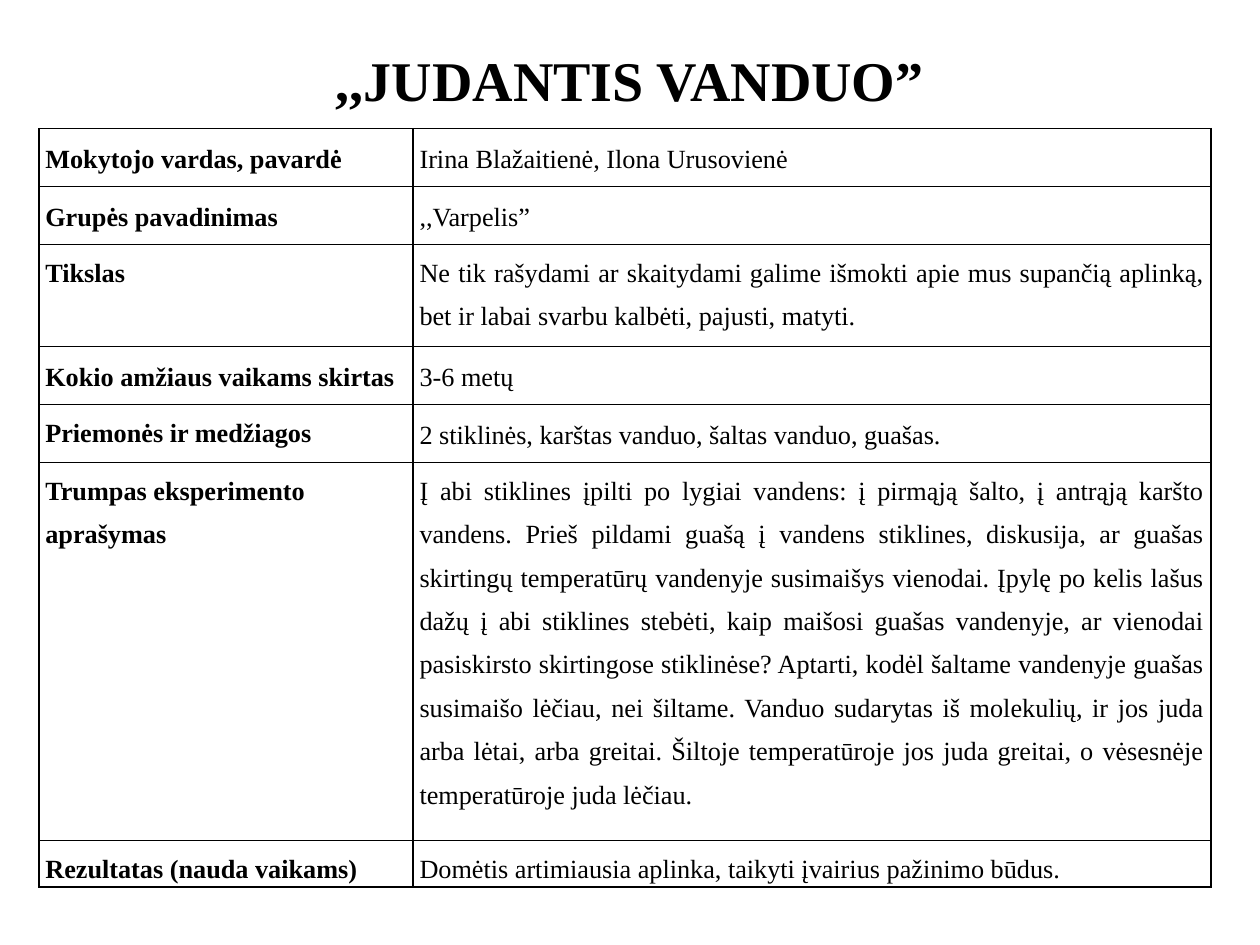
from dataclasses import dataclass

from lxml import etree
from pptx import Presentation
from pptx.dml.color import RGBColor
from pptx.enum.text import MSO_ANCHOR, PP_ALIGN
from pptx.oxml.ns import qn
from pptx.util import Inches, Pt

TOP, MIDDLE = MSO_ANCHOR.TOP, MSO_ANCHOR.MIDDLE
LEFT, CENTER, JUSTIFY = PP_ALIGN.LEFT, PP_ALIGN.CENTER, PP_ALIGN.JUSTIFY
COLORS = {"ink": "000000"}
FONT = "Times New Roman"
WIDTH, HEIGHT = 10, 7.5
COLUMNS = (2.97, 6.33)
BORDER = Pt(1)


@dataclass
class Row:
    label: str
    text: str
    height: float = 0.46
    anchor: MSO_ANCHOR = MIDDLE
    align: PP_ALIGN = LEFT
    spacing: float = 1.15
    label_spacing: float = 1.15


ROWS = [
    Row("Mokytojo vardas, pavardė", "Irina Blažaitienė, Ilona Urusovienė"),
    Row("Grupės pavadinimas", ",,Varpelis”"),
    Row("Tikslas",
        "Ne tik rašydami ar skaitydami galime išmokti apie mus supančią "
        "aplinką, bet ir labai svarbu kalbėti, pajusti, matyti.",
        0.81, TOP, JUSTIFY, 1.5, 1.5),
    Row("Kokio amžiaus vaikams skirtas", "3-6 metų"),
    Row("Priemonės ir medžiagos",
        "2 stiklinės, karštas vanduo, šaltas vanduo, guašas.",
        align=JUSTIFY, label_spacing=1.0),
    Row("Trumpas eksperimento aprašymas",
        "Į abi stiklines įpilti po lygiai vandens: į pirmąją šalto, į antrąją "
        "karšto vandens. Prieš pildami guašą į vandens stiklines, diskusija, "
        "ar guašas skirtingų temperatūrų vandenyje susimaišys vienodai. "
        "Įpylę po kelis lašus dažų į abi stiklines stebėti, kaip maišosi "
        "guašas vandenyje, ar vienodai pasiskirsto skirtingose stiklinėse? "
        "Aptarti, kodėl šaltame vandenyje guašas susimaišo lėčiau, nei "
        "šiltame. Vanduo sudarytas iš molekulių, ir jos juda arba lėtai, arba "
        "greitai. Šiltoje temperatūroje jos juda greitai, o vėsesnėje "
        "temperatūroje juda lėčiau.",
        3.0, TOP, JUSTIFY, 1.5, 1.5),
    Row("Rezultatas (nauda vaikams)",
        "Domėtis artimiausia aplinka, taikyti įvairius pažinimo būdus.",
        0.37, TOP, LEFT, 1.5, 1.5),
]


def write(tf, text: str, size: float, bold: bool, align: PP_ALIGN,
          spacing: float) -> None:
    p = tf.paragraphs[0]
    p.alignment, p.line_spacing = align, spacing
    r = p.add_run()
    r.text = text
    for name, value in {"name": FONT, "size": Pt(size), "bold": bold}.items():
        setattr(r.font, name, value)
    r.font.color.rgb = RGBColor.from_string(COLORS["ink"])


def add_borders(cell) -> None:
    tc_pr = cell._tc.get_or_add_tcPr()
    for i, side in enumerate(("lnL", "lnR", "lnT", "lnB")):
        ln = etree.Element(qn(f"a:{side}"), w=str(BORDER))
        fill = etree.SubElement(ln, qn("a:solidFill"))
        etree.SubElement(fill, qn("a:srgbClr"), val=COLORS["ink"])
        tc_pr.insert(i, ln)


def fill_cell(cell, text: str, bold: bool, anchor: MSO_ANCHOR,
              align: PP_ALIGN, spacing: float) -> None:
    fmt = {"margin_left": Inches(0.05), "margin_right": Inches(0.05),
           "margin_top": 0, "margin_bottom": 0, "vertical_anchor": anchor}
    for name, value in fmt.items():
        setattr(cell, name, value)
    cell.fill.background()
    add_borders(cell)
    write(cell.text_frame, text, 15, bold, align, spacing)


def add_title(slide) -> None:
    sp = slide.shapes.title
    box = {"left": 0, "top": 0.31, "width": WIDTH, "height": 0.64}
    for name, value in box.items():
        setattr(sp, name, Inches(value))
    sp.text_frame.vertical_anchor = TOP
    write(sp.text_frame, ",,JUDANTIS VANDUO”", 32, True, CENTER, 1.0)


def add_experiment_table(slide) -> None:
    size = (sum(COLUMNS), sum(row.height for row in ROWS))
    table = slide.shapes.add_table(
        len(ROWS), len(COLUMNS), Inches(0.31), Inches(1.02),
        *map(Inches, size)).table
    table.first_row = table.horz_banding = False
    for column, width in zip(table.columns, COLUMNS):
        column.width = Inches(width)
    for i, row in enumerate(ROWS):
        table.rows[i].height = Inches(row.height)
        fill_cell(table.cell(i, 0), row.label, True, row.anchor, LEFT,
                  row.label_spacing)
        fill_cell(table.cell(i, 1), row.text, False, row.anchor, row.align,
                  row.spacing)


def main() -> None:
    prs = Presentation()
    prs.slide_width, prs.slide_height = Inches(WIDTH), Inches(HEIGHT)
    slide = prs.slides.add_slide(prs.slide_layouts[5])  # title only
    add_experiment_table(slide)
    add_title(slide)
    prs.save("out.pptx")


if __name__ == "__main__":
    main()
